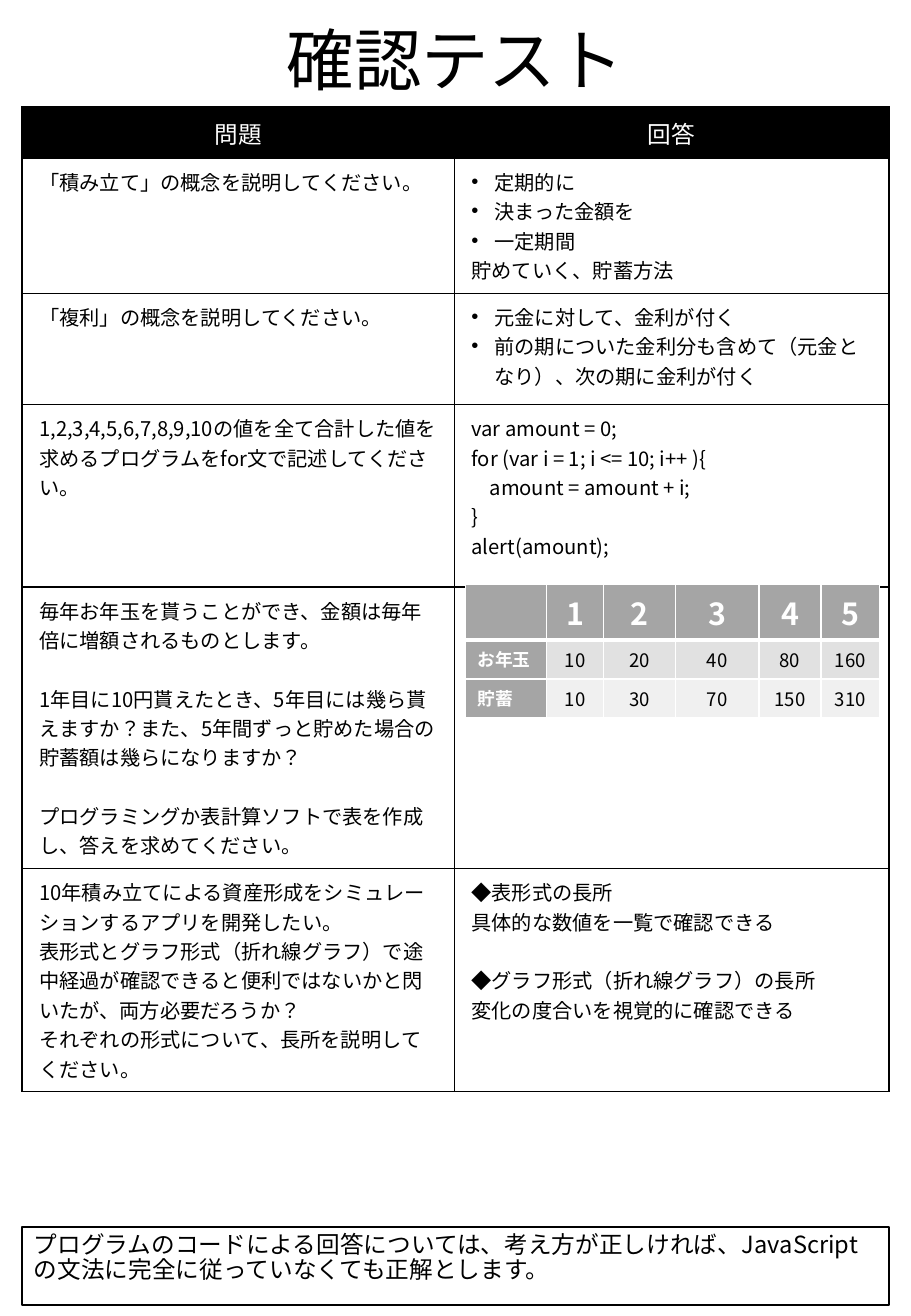
"""Build the confirmation test sheet with its answers."""
from dataclasses import dataclass

from lxml import etree
from pptx import Presentation
from pptx.dml.color import RGBColor
from pptx.enum.lang import MSO_LANGUAGE_ID
from pptx.enum.shapes import MSO_SHAPE
from pptx.enum.text import MSO_ANCHOR, PP_ALIGN
from pptx.oxml.ns import qn
from pptx.util import Cm, Pt

RECTANGLE = MSO_SHAPE.RECTANGLE
JAPANESE = MSO_LANGUAGE_ID.JAPANESE
LEFT, CENTER = PP_ALIGN.LEFT, PP_ALIGN.CENTER
TOP, BOTTOM = MSO_ANCHOR.TOP, MSO_ANCHOR.BOTTOM


@dataclass(frozen=True)
class Theme:
    """Colours, font and type sizes of the sheet."""
    font: str = "Noto Sans CJK JP"
    ink: str = "000000"
    paper: str = "FFFFFF"
    heading: str = "A5A5A5"
    gift_band: str = "E1E1E1"
    savings_band: str = "F0F0F0"
    title: float = 40
    header: float = 14
    body: float = 12
    year: float = 18
    label: float = 10.5
    amount: float = 11
    line_gap: float = 17.4


@dataclass(frozen=True)
class Line:
    """One paragraph with its optional bullet, gap above and indent."""
    text: str
    bullet: bool = False
    gap: bool = False
    indent: float = 0


THEME = Theme()
SHEET_LEFT, SHEET_WIDTH = Cm(0.46), Cm(18.13)
QUESTION_COLUMNS = (9.04, 9.09)
QUESTION_ROWS = (1.07, 2.82, 2.33, 3.81, 5.89, 4.66)
SAVINGS_COLUMNS = (1.7, 1.19, 1.5, 1.75, 1.3, 1.22)
SAVINGS_ROWS = (1.16, 0.81, 0.81)

QUESTIONS = (
    ([Line("「積み立て」の概念を説明してください。")],
     [Line("定期的に", bullet=True),
      Line("決まった金額を", bullet=True),
      Line("一定期間", bullet=True),
      Line("貯めていく、貯蓄方法")]),
    ([Line("「複利」の概念を説明してください。")],
     [Line("元金に対して、金利が付く", bullet=True),
      Line("前の期についた金利分も含めて（元金となり）、次の期に金利が付く", bullet=True)]),
    ([Line("1,2,3,4,5,6,7,8,9,10の値を全て合計した値を求めるプログラムをfor文で記述してください。")],
     [Line("var amount = 0;"),
      Line("for (var i = 1; i <= 10; i++ ){"),
      Line("amount = amount + i;", indent=0.38),
      Line("}"),
      Line("alert(amount);")]),
    ([Line("毎年お年玉を貰うことができ、金額は毎年倍に増額されるものとします。"),
      Line("1年目に10円貰えたとき、5年目には幾ら貰えますか？また、5年間ずっと貯めた場合の貯蓄額は幾らになりますか？", gap=True),
      Line("プログラミングか表計算ソフトで表を作成し、答えを求めてください。", gap=True)],
     []),
    ([Line("10年積み立てによる資産形成をシミュレーションするアプリを開発したい。"),
      Line("表形式とグラフ形式（折れ線グラフ）で途中経過が確認できると便利ではないかと閃いたが、両方必要だろうか？"),
      Line("それぞれの形式について、長所を説明してください。")],
     [Line("◆表形式の長所"),
      Line("具体的な数値を一覧で確認できる"),
      Line("◆グラフ形式（折れ線グラフ）の長所", gap=True),
      Line("変化の度合いを視覚的に確認できる")]),
)
SAVINGS = (
    ("", "1", "2", "3", "4", "5"),
    ("お年玉", "10", "20", "40", "80", "160"),
    ("貯蓄", "10", "30", "70", "150", "310"),
)
NOTE = "プログラムのコードによる回答については、考え方が正しければ、JavaScriptの文法に完全に従っていなくても正解とします。"


def rgb(colour):
    """Turn a hex string into a colour."""
    return RGBColor.from_string(colour)


def format_paragraph(paragraph, size, colour, align=LEFT, bold=False, spacing=None):
    """Set the alignment, line spacing and run fonts of a paragraph."""
    paragraph.alignment = align
    paragraph.line_spacing = spacing
    for run in paragraph.runs:
        run.font.size = Pt(size)
        run.font.bold = bold
        run.font.language_id = JAPANESE
        run.font.color.rgb = rgb(colour)
        run.font.name = THEME.font
        etree.SubElement(run.font._element, qn("a:ea"), typeface=THEME.font)


def indent_paragraph(paragraph, line):
    """Apply the bullet or left indent of a line."""
    properties = paragraph._p.get_or_add_pPr()
    if line.bullet:
        properties.set("marL", str(Cm(0.48)))
        properties.set("indent", str(-Cm(0.48)))
        etree.SubElement(properties, qn("a:buFont"), typeface="Arial")
        etree.SubElement(properties, qn("a:buChar"), char="•")
    elif line.indent:
        properties.set("marL", str(Cm(line.indent)))


def write_lines(frame, lines):
    """Fill a text frame with body lines."""
    for number, line in enumerate(lines):
        paragraph = frame.add_paragraph() if number else frame.paragraphs[0]
        paragraph.text = line.text
        format_paragraph(paragraph, THEME.body, THEME.ink)
        if line.gap:
            paragraph.space_before = Pt(THEME.line_gap)
        indent_paragraph(paragraph, line)


def write_cell(cell, text, size, colour, align=CENTER, bold=False):
    """Write a single line in a table cell."""
    cell.text_frame.text = text
    format_paragraph(cell.text_frame.paragraphs[0], size, colour, align, bold)


def style_cell(cell, border, fill=None, bottom=1):
    """Draw the four borders of a cell and set its fill."""
    properties = cell._tc.get_or_add_tcPr()
    for side, width in (("L", 1), ("R", 1), ("T", 1), ("B", bottom)):
        edge = etree.SubElement(properties, qn(f"a:ln{side}"), w=str(Pt(width)))
        solid = etree.SubElement(edge, qn("a:solidFill"))
        etree.SubElement(solid, qn("a:srgbClr"), val=border)
    if fill:
        cell.fill.solid()
        cell.fill.fore_color.rgb = rgb(fill)
    else:
        cell.fill.background()


def add_grid(slide, left, top, columns, rows):
    """Add a table with the given column widths and row heights."""
    grid = slide.shapes.add_table(len(rows), len(columns), left, top,
                                  Cm(sum(columns)), Cm(sum(rows))).table
    grid.horz_banding = False
    for column, width in zip(grid.columns, columns):
        column.width = Cm(width)
    for row, height in zip(grid.rows, rows):
        row.height = Cm(height)
    return grid


def add_title(slide, text):
    """Add the sheet title."""
    frame = slide.shapes.add_textbox(Cm(1.42), Cm(0.15), Cm(16.2), Cm(2.06)).text_frame
    frame.word_wrap = True
    frame.vertical_anchor = BOTTOM
    frame.text = text
    format_paragraph(frame.paragraphs[0], THEME.title, THEME.ink, CENTER, spacing=0.9)


def add_questions(slide):
    """Add the table of questions and answers."""
    grid = add_grid(slide, SHEET_LEFT, Cm(2.24), QUESTION_COLUMNS, QUESTION_ROWS)
    for cell in grid.iter_cells():
        cell.margin_left = cell.margin_right = Cm(0.36)
        cell.margin_top = cell.margin_bottom = Cm(0.18)
    for column, heading in enumerate(("問題", "回答")):
        write_cell(grid.cell(0, column), heading, THEME.header, THEME.paper)
        style_cell(grid.cell(0, column), THEME.ink, THEME.ink)
    for row, entry in enumerate(QUESTIONS, 1):
        for column, lines in enumerate(entry):
            write_lines(grid.cell(row, column).text_frame, lines)
            style_cell(grid.cell(row, column), THEME.ink)


def add_savings(slide):
    """Add the table of yearly gifts and savings."""
    grid = add_grid(slide, Cm(9.73), Cm(12.22), SAVINGS_COLUMNS, SAVINGS_ROWS)
    bands = (THEME.heading, THEME.gift_band, THEME.savings_band)
    for row, (values, band) in enumerate(zip(SAVINGS, bands)):
        for column, value in enumerate(values):
            cell = grid.cell(row, column)
            if row == 0:
                write_cell(cell, value, THEME.year, THEME.paper, bold=True)
            elif column == 0:
                write_cell(cell, value, THEME.label, THEME.paper, LEFT, bold=True)
            else:
                write_cell(cell, value, THEME.amount, THEME.ink)
            style_cell(cell, THEME.paper, band if column else THEME.heading, 1 if row else 3)


def add_note(slide, text):
    """Add the framed marking note."""
    note = slide.shapes.add_shape(RECTANGLE, SHEET_LEFT, Cm(25.65), SHEET_WIDTH, Cm(1.63))
    note.shadow.inherit = False
    note.fill.solid()
    note.fill.fore_color.rgb = rgb(THEME.paper)
    note.line.color.rgb = rgb(THEME.ink)
    note.line.width = Pt(1)
    frame = note.text_frame
    frame.word_wrap = True
    frame.vertical_anchor = TOP
    frame.text = text
    format_paragraph(frame.paragraphs[0], THEME.header, THEME.ink, spacing=0.9)


def main():
    """Build and save the sheet."""
    deck = Presentation()
    deck.slide_width, deck.slide_height = Cm(19.05), Cm(27.51)
    slide = deck.slides.add_slide(deck.slide_layouts[6])
    add_title(slide, "確認テスト")
    add_questions(slide)
    add_note(slide, NOTE)
    add_savings(slide)
    deck.save("out.pptx")


if __name__ == "__main__":
    main()
